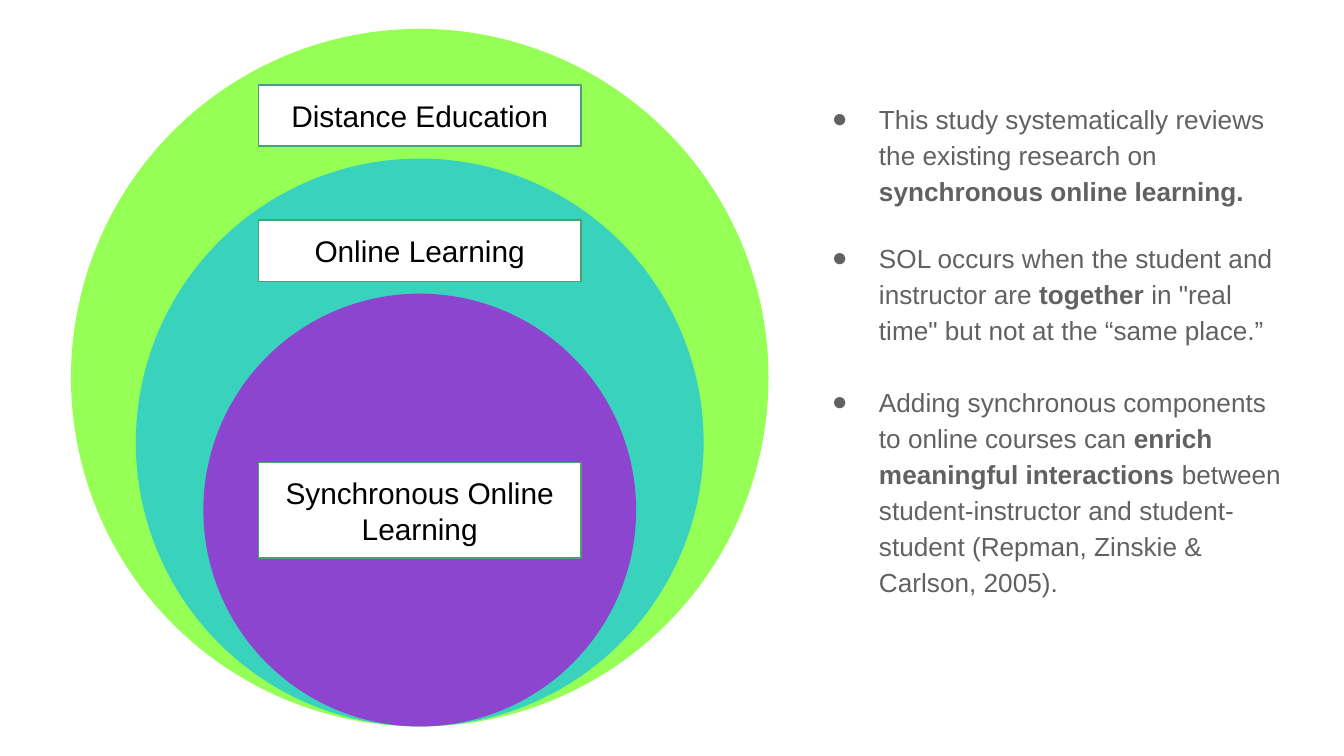
"""Builds a slide of nested circles on distance education beside a bulleted summary."""
from lxml import etree
from pptx import Presentation
from pptx.dml.color import RGBColor
from pptx.enum.shapes import MSO_SHAPE
from pptx.enum.text import MSO_ANCHOR, MSO_AUTO_SIZE, PP_ALIGN
from pptx.oxml.ns import qn
from pptx.util import Inches, Pt

ELLIPSE, RECTANGLE = MSO_SHAPE.OVAL, MSO_SHAPE.RECTANGLE
TOP, MIDDLE = MSO_ANCHOR.TOP, MSO_ANCHOR.MIDDLE
CENTER, LEFT = PP_ALIGN.CENTER, PP_ALIGN.LEFT
FIXED_SIZE = MSO_AUTO_SIZE.NONE

GREEN = RGBColor(0x96, 0xFF, 0x55)
TEAL = RGBColor(0x39, 0xD2, 0xBD)
PURPLE = RGBColor(0x8D, 0x44, 0xCF)
BORDER = RGBColor(0x4B, 0xA1, 0x73)
WHITE = RGBColor(0xFF, 0xFF, 0xFF)
BLACK = RGBColor(0x00, 0x00, 0x00)
GRAY = RGBColor(0x61, 0x61, 0x61)

CELL = Inches(0.1)
AXIS_COLUMN = 31.23
BASE_ROW = 54.05
LABEL_COLUMNS = 24

CIRCLES = [(51.9, GREEN), (42.25, TEAL), (32.2, PURPLE)]
LABELS = [
    ("Distance Education", 6.33, 4.55),
    ("Online Learning", 16.38, 4.55),
    ("Synchronous Online Learning", 34.4, 7.13),
]
POINTS = [
    (16.5, [("This study systematically reviews the existing research on ", False),
            ("synchronous online learning.", True)]),
    (19.3, [("SOL occurs when the student and instructor are ", False),
            ("together", True),
            (" in \"real time\" but not at the “same place.”", False)]),
    (0, [("Adding synchronous components to online courses can ", False),
         ("enrich meaningful interactions", True),
         (" between student-instructor and student-student "
          "(Repman, Zinskie & Carlson, 2005).", False)]),
]


class Page:
    font = "Arial"
    label_size = Pt(16)
    body_size = Pt(14)

    def __init__(self, deck):
        self.slide = deck.slides.add_slide(deck.slide_layouts[1])
        title = self.slide.shapes.title
        title.element.getparent().remove(title.element)

    def cells(self, *counts):
        return [round(count * CELL) for count in counts]

    def shape(self, kind, column, row, columns, rows, fill):
        shape = self.slide.shapes.add_shape(kind, *self.cells(column, row, columns, rows))
        shape.shadow.inherit = False
        shape.fill.solid()
        shape.fill.fore_color.rgb = fill
        shape.line.fill.background()
        return shape

    def frame(self, box, anchor):
        frame = box.text_frame
        frame.word_wrap = True
        frame.auto_size = FIXED_SIZE
        frame.vertical_anchor = anchor
        frame.margin_left = frame.margin_right = CELL
        frame.margin_top = frame.margin_bottom = CELL
        return frame

    def span(self, para, text, size, color, bold=False):
        span = para.add_run()
        span.text = text
        span.font.name = self.font
        span.font.size = size
        span.font.bold = bold
        span.font.color.rgb = color

    def circle(self, diameter, fill):
        self.shape(ELLIPSE, AXIS_COLUMN - diameter / 2, BASE_ROW - diameter,
                   diameter, diameter, fill)

    def label(self, text, row, rows):
        box = self.shape(RECTANGLE, AXIS_COLUMN - LABEL_COLUMNS / 2, row,
                         LABEL_COLUMNS, rows, WHITE)
        box.line.color.rgb = BORDER
        box.line.width = Pt(0.75)
        para = self.frame(box, MIDDLE).paragraphs[0]
        para.alignment = CENTER
        self.span(para, text, self.label_size, BLACK)

    def bullet(self, para):
        properties = para._p.get_or_add_pPr()
        properties.set("marL", str(Inches(0.5)))
        properties.set("indent", str(Inches(-0.35)))
        color = etree.SubElement(properties, qn("a:buClr"))
        etree.SubElement(color, qn("a:srgbClr"), val=str(GRAY))
        etree.SubElement(properties, qn("a:buFont"), typeface=self.font)
        etree.SubElement(properties, qn("a:buChar"), char="●")

    def points(self, column, row, columns, rows, points):
        body = self.slide.placeholders[1]
        body.left, body.top, body.width, body.height = self.cells(column, row, columns, rows)
        frame = self.frame(body, TOP)
        for index, (gap, spans) in enumerate(points):
            para = frame.add_paragraph() if index else frame.paragraphs[0]
            para.alignment = LEFT
            para.line_spacing = 1.15
            para.space_before = Pt(0)
            para.space_after = Pt(gap)
            self.bullet(para)
            for text, bold in spans:
                self.span(para, text, self.body_size, GRAY, bold)


def main():
    deck = Presentation()
    deck.slide_width, deck.slide_height = Pt(720), Pt(405)
    page = Page(deck)
    for diameter, fill in CIRCLES:
        page.circle(diameter, fill)
    for text, row, rows in LABELS:
        page.label(text, row, rows)
    page.points(59.4, 6.33, 37.6, 44, POINTS)
    deck.save("out.pptx")


if __name__ == "__main__":
    main()
